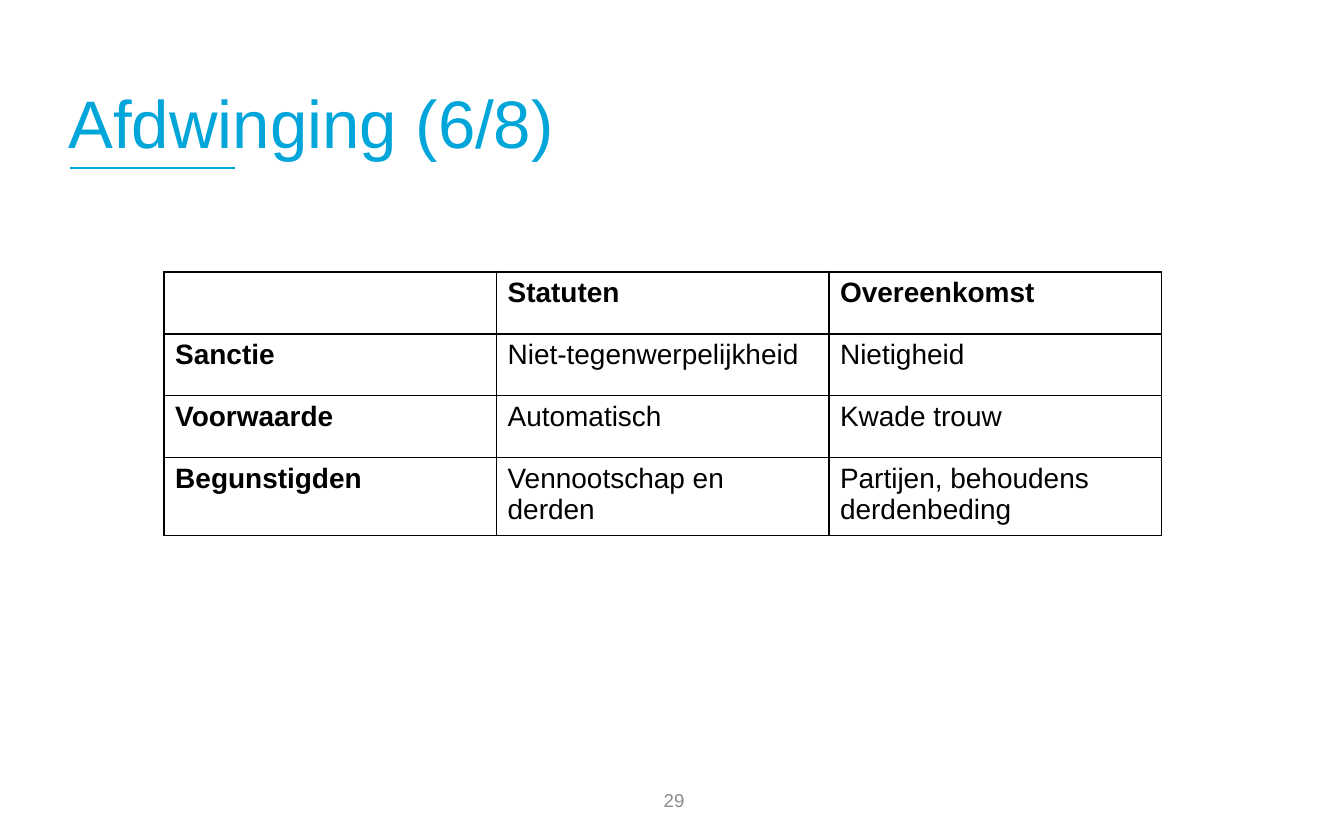
from lxml import etree
from pptx import Presentation
from pptx.dml.color import RGBColor
from pptx.enum import shapes, text
from pptx.oxml import ns
from pptx.util import Pt

COLORS = {"accent": "00A5D9", "ink": "000000", "number": "8C8C8C", "paper": "FFFFFF"}
FONT = "Arial"
ROWS = [
    ["", "Statuten", "Overeenkomst"],
    ["Sanctie", "Niet-tegenwerpelijkheid", "Nietigheid"],
    ["Voorwaarde", "Automatisch", "Kwade trouw"],
    ["Begunstigden", "Vennootschap en derden", "Partijen, behoudens derdenbeding"],
]
ROW_HEIGHTS = [33.2, 33.2, 33.2, 41.8]
COLUMN_WIDTH = 178.1


def rgb(name):
    return RGBColor.from_string(COLORS[name])


def style(paragraph, size, color, bold=False):
    font = paragraph.font
    font.name, font.size, font.bold = FONT, Pt(size), bold
    font.color.rgb = rgb(color)


def add_label(slide, wording, box, size, color, anchor, align, side_inset):
    label = slide.shapes.add_textbox(*map(Pt, box))
    frame = label.text_frame
    frame.word_wrap = True
    frame.vertical_anchor = anchor
    frame.margin_left = frame.margin_right = Pt(side_inset)
    paragraph = frame.paragraphs[0]
    paragraph.text = wording
    paragraph.alignment = align
    style(paragraph, size, color)
    return paragraph


def add_title_rule(slide):
    rule = slide.shapes.add_connector(
        shapes.MSO_CONNECTOR.STRAIGHT, Pt(37.6), Pt(90), Pt(126), Pt(90))
    rule.line.color.rgb = rgb("accent")
    rule.line.width = Pt(1.5)
    etree.SubElement(rule._element.spPr, ns.qn("a:effectLst"))


def set_borders(cell):
    """Draw a 1 pt line on each side; borders must precede the cell's fill."""
    properties = cell._tc.get_or_add_tcPr()
    for position, side in enumerate(("lnL", "lnR", "lnT", "lnB")):
        border = etree.Element(ns.qn(f"a:{side}"), w=str(Pt(1)))
        fill = etree.SubElement(border, ns.qn("a:solidFill"))
        etree.SubElement(fill, ns.qn("a:srgbClr"), val=COLORS["ink"])
        properties.insert(position, border)


def add_comparison(slide):
    columns = len(ROWS[0])
    table = slide.shapes.add_table(
        len(ROWS), columns, Pt(88), Pt(145.6),
        Pt(columns * COLUMN_WIDTH), Pt(sum(ROW_HEIGHTS))).table
    table.horz_banding = False
    for column in table.columns:
        column.width = Pt(COLUMN_WIDTH)
    for r, (wordings, height) in enumerate(zip(ROWS, ROW_HEIGHTS)):
        table.rows[r].height = Pt(height)
        for c, wording in enumerate(wordings):
            cell = table.cell(r, c)
            cell.margin_left = cell.margin_right = Pt(5.9)
            cell.margin_top = cell.margin_bottom = Pt(2.95)
            cell.fill.solid()
            cell.fill.fore_color.rgb = rgb("paper")
            set_borders(cell)
            cell.text = wording
            style(cell.text_frame.paragraphs[0], 15, "ink", bold=r == 0 or c == 0)


def main():
    presentation = Presentation()
    presentation.slide_width, presentation.slide_height = Pt(720), Pt(450)
    slide = presentation.slides.add_slide(presentation.slide_layouts[6])
    add_title_rule(slide)
    add_comparison(slide)
    add_label(slide, "29", (277.2, 416.9, 167.8, 23.8), 10, "number",
              text.MSO_ANCHOR.MIDDLE, text.PP_ALIGN.CENTER, 7.2)
    title = add_label(slide, "Afdwinging (6/8)", (36.7, 15.1, 648, 74.9), 36, "accent",
                      text.MSO_ANCHOR.BOTTOM, text.PP_ALIGN.LEFT, 0)
    title.line_spacing = 0.8
    presentation.save("out.pptx")


if __name__ == "__main__":
    main()
